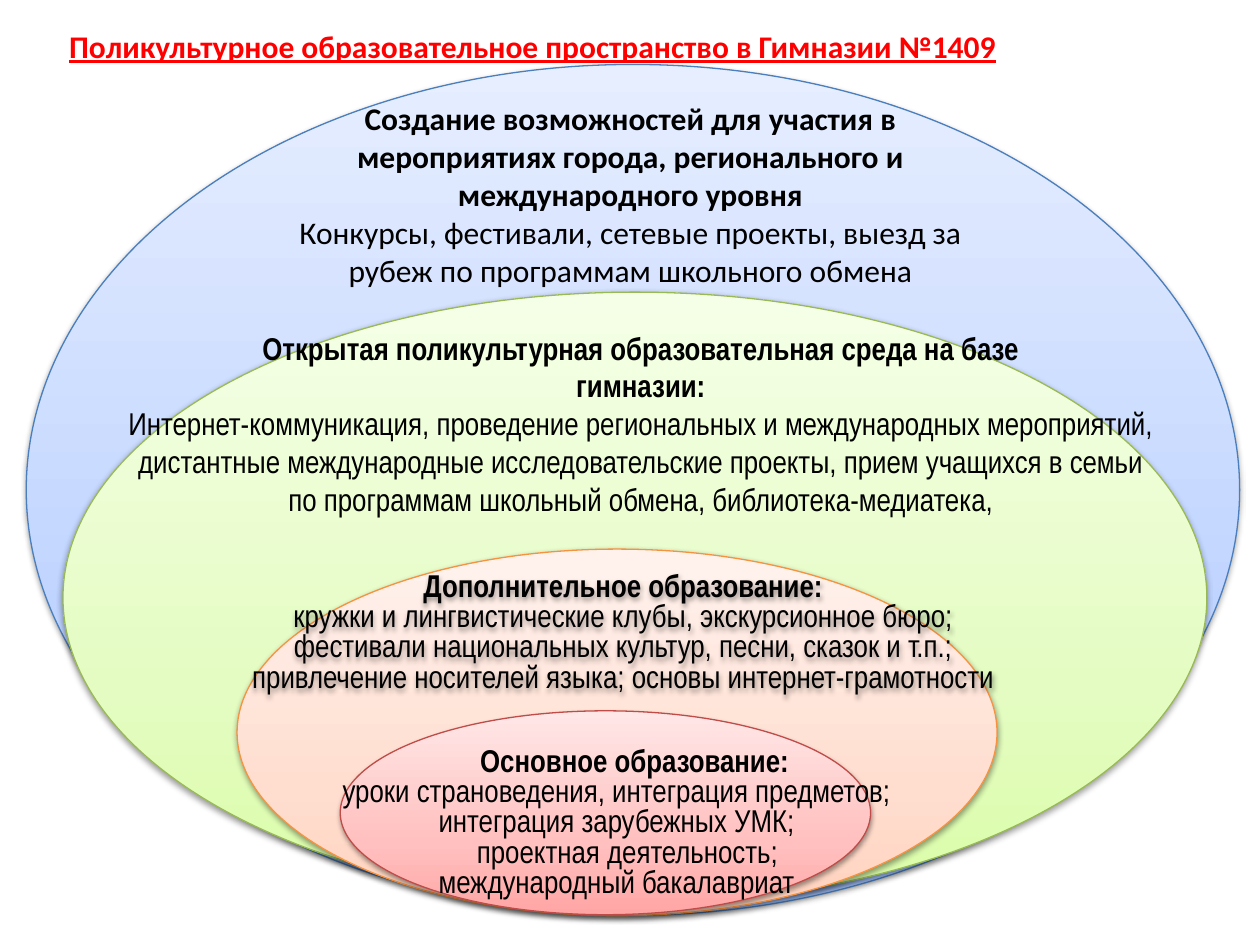
from dataclasses import dataclass

from lxml import etree
from pptx import Presentation
from pptx.dml.color import RGBColor
from pptx.enum.shapes import MSO_SHAPE
from pptx.enum.text import MSO_ANCHOR, MSO_AUTO_SIZE, PP_ALIGN
from pptx.oxml import parse_xml
from pptx.oxml.ns import nsdecls
from pptx.util import Cm, Pt

OVAL = MSO_SHAPE.OVAL
TOP = MSO_ANCHOR.TOP
FIXED = MSO_AUTO_SIZE.NONE
GROW = MSO_AUTO_SIZE.SHAPE_TO_FIT_TEXT
LEFT, CENTER = PP_ALIGN.LEFT, PP_ALIGN.CENTER
TITLE_ONLY = 5


@dataclass(frozen=True)
class Theme:
    title: str = "FF0000"
    text: str = "000000"
    size: float = 18
    outline: float = 0.75
    sans: str = "Calibri"
    narrow: str = "Arial Narrow"
    stops: tuple = (0, 35, 100)
    blue: tuple = ("4B7EBC", "A4C4FF", "BFD4FF", "E6EEFF")
    green: tuple = ("98B955", "DAFDA7", "E4FCC2", "F5FFE7")
    orange: tuple = ("F69240", "FFD2BD", "FFDED0", "FFF2ED")
    red: tuple = ("BF4C48", "FFA6A5", "FFC0BF", "FFE7E7")


THEME = Theme()


@dataclass(frozen=True)
class Box:
    left: float
    top: float
    width: float
    height: float

    def inner(self, left, top, width, height):
        return Box(self.left + left, self.top + top, width, height)

    def lengths(self):
        return Cm(self.left), Cm(self.top), Cm(self.width), Cm(self.height)


@dataclass(frozen=True)
class Line:
    text: str
    bold: bool = False
    indent: float = 0


@dataclass(frozen=True)
class Layer:
    box: Box
    colors: tuple
    text_offset: tuple
    lines: tuple
    font: str = THEME.narrow
    spacing: float = 1.0
    text_shadow: bool = False


LAYERS = (
    Layer(Box(0.53, 1.3, 24.46, 17.15), THEME.blue, (4.52, 0.58, 15.32, 4.11), (
        Line("Создание возможностей для участия в мероприятиях города, "
             "регионального и международного уровня", True),
        Line("Конкурсы, фестивали, сетевые проекты, выезд за рубеж "
             "по программам школьного обмена"),
    ), font=THEME.sans),
    Layer(Box(1.27, 5.89, 23.06, 12.32), THEME.green, (0.97, 0.61, 21.36, 4.11), (
        Line("Открытая поликультурная образовательная среда на базе", True),
        Line("гимназии:", True),
        Line("Интернет-коммуникация, проведение региональных и международных "
             "мероприятий, дистантные международные исследовательские проекты, "
             "прием учащихся в семьи по программам школьный обмена, "
             "библиотека-медиатека,"),
    )),
    Layer(Box(4.78, 11.07, 15.32, 7.39), THEME.orange, (0, 0.36, 15.57, 2.74), (
        Line("Дополнительное образование:", True),
        Line("кружки и лингвистические клубы, экскурсионное бюро;"),
        Line("фестивали национальных культур, песни, сказок и т.п.;"),
        Line("привлечение носителей языка; основы интернет-грамотности"),
    ), spacing=0.8, text_shadow=True),
    Layer(Box(6.86, 14.33, 10.69, 4.11), THEME.red, (-0.41, 0.63, 11.96, 3.35), (
        Line("Основное образование:", True, 0.73),
        Line("уроки страноведения, интеграция предметов;"),
        Line("интеграция зарубежных УМК;"),
        Line("проектная деятельность;", indent=0.44),
        Line("международный бакалавриат"),
    ), spacing=0.8),
)


def add_span(para, text, font, color, bold):
    span = para.add_run()
    span.text = text
    span.font.name = font
    span.font.size = Pt(THEME.size)
    span.font.bold = bold
    span.font.color.rgb = RGBColor.from_string(color)
    return span


def add_shadow(shape):
    shape.shadow.inherit = False
    effects = shape._element.spPr.find("{*}effectLst")
    effects.append(parse_xml(
        f'<a:outerShdw {nsdecls("a")} blurRad="{Pt(3.1)}" dist="{Pt(1.6)}" '
        'dir="5400000" rotWithShape="0"><a:srgbClr val="000000">'
        '<a:alpha val="38000"/></a:srgbClr></a:outerShdw>'))


def fill_gradient(shape, colors):
    shape.fill.gradient()
    shape.fill.gradient_angle = 90
    stops = shape._element.spPr.find("{*}gradFill/{*}gsLst")
    for stop in list(stops):
        stops.remove(stop)
    for position, color in zip(THEME.stops, colors):
        stop = etree.SubElement(stops, stops.tag.replace("gsLst", "gs"))
        stop.set("pos", str(position * 1000))
        stop.append(parse_xml(f'<a:srgbClr {nsdecls("a")} val="{color}"/>'))


def add_title(page, box):
    title = page.shapes.title
    title.left, title.top, title.width, title.height = box.lengths()
    frame = title.text_frame
    frame.word_wrap = True
    frame.auto_size = FIXED
    frame.vertical_anchor = TOP
    para = frame.paragraphs[0]
    para.alignment = LEFT
    span = add_span(para, "Поликультурное образовательное пространство в Гимназии №1409",
                    THEME.sans, THEME.title, True)
    span.font.underline = True


def add_layer(page, layer):
    outline, *colors = layer.colors
    oval = page.shapes.add_shape(OVAL, *layer.box.lengths())
    fill_gradient(oval, colors)
    oval.line.color.rgb = RGBColor.from_string(outline)
    oval.line.width = Pt(THEME.outline)
    add_shadow(oval)

    label = page.shapes.add_textbox(*layer.box.inner(*layer.text_offset).lengths())
    if layer.text_shadow:
        add_shadow(label)
    frame = label.text_frame
    frame.word_wrap = True
    frame.auto_size = GROW
    for index, line in enumerate(layer.lines):
        para = frame.add_paragraph() if index else frame.paragraphs[0]
        para.alignment = CENTER
        para.line_spacing = layer.spacing
        if line.indent:
            para._p.get_or_add_pPr().set("marL", str(Cm(line.indent)))
        add_span(para, line.text, layer.font, THEME.text, line.bold)


def main():
    deck = Presentation()
    deck.slide_width, deck.slide_height = Cm(25.4), Cm(19.05)
    page = deck.slides.add_slide(deck.slide_layouts[TITLE_ONLY])
    add_title(page, Box(1.14, 0.41, 23.19, 1.02))
    for layer in LAYERS:
        add_layer(page, layer)
    deck.save("out.pptx")


if __name__ == "__main__":
    main()
